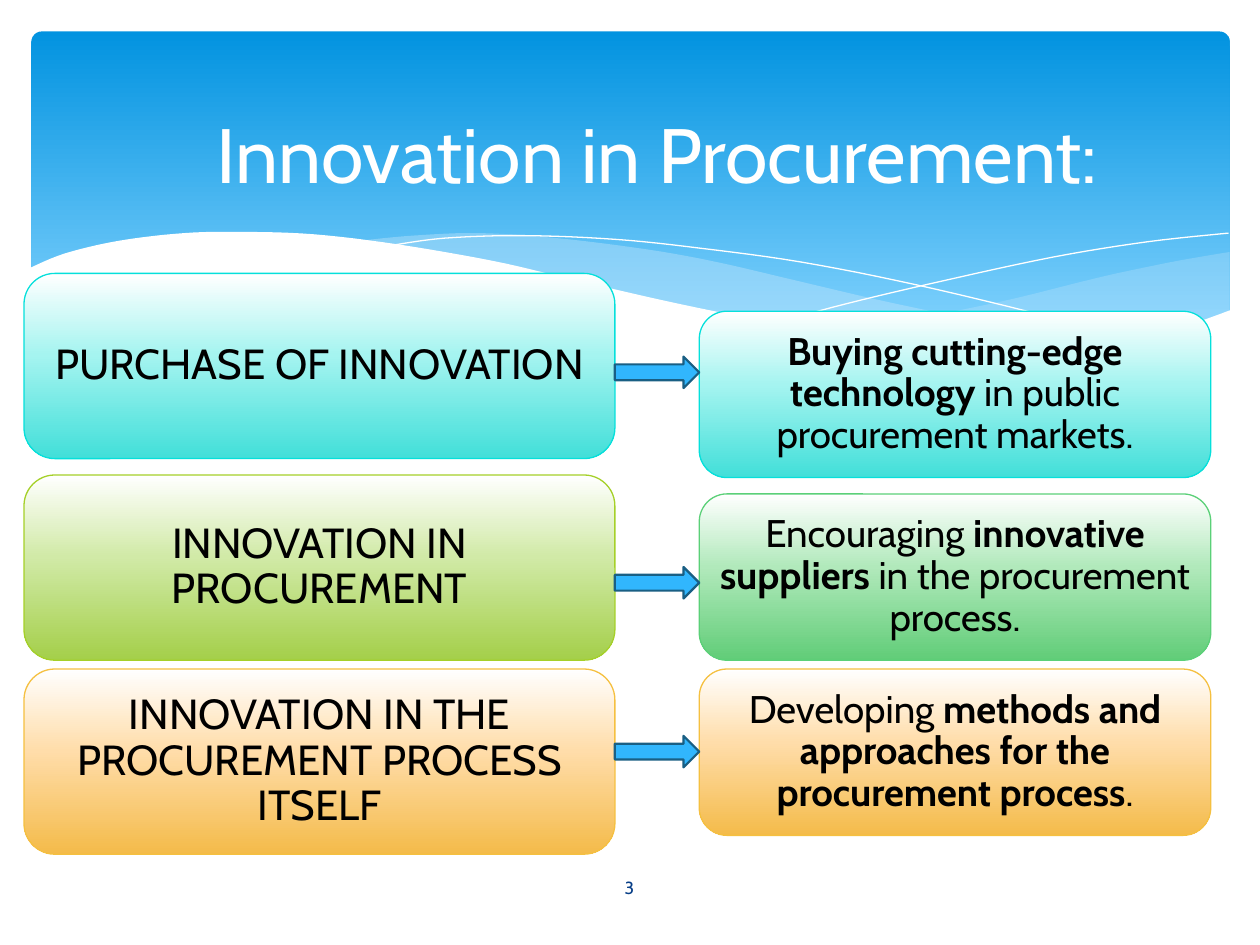
from dataclasses import dataclass

import pptx
import pptx.dml.color
import pptx.enum.shapes
import pptx.enum.text
import pptx.oxml
import pptx.oxml.ns
import pptx.util

# The grid has 100 columns and 75 rows of square cells
SLIDE_WIDTH, SLIDE_HEIGHT = pptx.util.Inches(10), pptx.util.Inches(7.5)
COLUMN, ROW = SLIDE_WIDTH / 100, SLIDE_HEIGHT / 75
SHAPES = pptx.enum.shapes.MSO_SHAPE


@dataclass(frozen=True)
class Theme:
    font: str = "Cabin"
    white: str = "FFFFFF"
    black: str = "000000"
    banner: tuple = ((0, "0293E0"), (90, "83D3FE"))
    wave: str = "C6E7FC"
    arrow: str = "31B6FD"
    arrow_line: str = "195F84"
    number: str = "073E87"
    title_size: int = 44
    topic_size: int = 24
    detail_size: int = 22
    number_size: int = 10


@dataclass(frozen=True)
class Area:
    """A rectangle in grid cells."""
    left: float
    top: float
    width: float
    height: float

    def emu(self) -> tuple:
        return (round(self.left * COLUMN), round(self.top * ROW),
                round(self.width * COLUMN), round(self.height * ROW))


@dataclass(frozen=True)
class Tint:
    middle: str
    bottom: str
    line: str

    def stops(self) -> tuple:
        return (0, THEME.white), (44, self.middle), (100, self.bottom)


@dataclass(frozen=True)
class Pair:
    """A topic, its arrow and its detail; ** marks bold text."""
    topic: str
    topic_top: float
    topic_tint: Tint
    arrow_top: float
    detail: str
    detail_top: float
    detail_tint: Tint


THEME = Theme()
TURQUOISE = Tint("A5F4F0", "42DFD9", "05E0DB")
LIME = Tint("D1EAA7", "A4CF4A", "A5D028")
GREEN = Tint("B1E9BB", "61CD78", "5BD078")
AMBER = Tint("FFDDAA", "F4BB4A", "F5C040")

PAIRS = (
    Pair("PURCHASE OF INNOVATION", 21.7, TURQUOISE, 28.3,
         "**Buying cutting-edge technology **in public procurement markets.", 24.7, TURQUOISE),
    Pair("INNOVATION IN PROCUREMENT", 37.7, LIME, 45,
         "Encouraging **innovative suppliers **in the procurement process.", 39.2, GREEN),
    Pair("INNOVATION IN THE PROCUREMENT PROCESS ITSELF", 53.1, AMBER, 58.4,
         "Developing **methods and approaches for the procurement process**.", 53.1, AMBER),
)

# Knots of the wave curves, in grid cells
RIGHT_WAVE_TOP = ((97.6, 20), (93.5, 20.7), (89.1, 21.6), (86.1, 22.3),
                  (80.5, 23.7), (75.3, 24.8), (70.6, 25.7), (66.1, 26.5))
RIGHT_WAVE_BOTTOM = ((66.1, 26.5), (70.5, 27.1), (75.7, 27.6), (80.3, 27.8), (84.4, 27.7),
                     (88.1, 27.3), (91.3, 26.7), (94.2, 25.9), (97.6, 24.7))
LEFT_WAVE_TOP = ((89.3, 27.3), (83.7, 26.5), (77.5, 25.4), (70.6, 24), (62.9, 22.2),
                 (56.9, 20.8), (51.4, 19.8), (44.2, 18.9), (38, 18.5), (32.8, 18.7), (28.6, 19.1))
LEFT_WAVE_BOTTOM = ((28.6, 19.1), (34.2, 19.9), (40.4, 21.1), (44.9, 22.2), (53, 24),
                    (60.1, 25.5), (66.5, 26.6), (72.2, 27.4), (77.3, 27.7), (81.8, 27.8),
                    (85.7, 27.7), (89.3, 27.3))
FALLING_LINE = ((30.9, 19.5), (35.3, 18.9), (41.6, 18.7), (48.9, 19), (55.6, 19.7),
                (63.6, 20.8), (72.7, 22.6), (83.1, 25.1), (90.7, 27.2))
RISING_LINE = ((61.3, 25.7), (67.2, 24.1), (74.8, 22.3), (83.6, 20.4), (91, 19.2), (97.5, 18.5))
SHEET_TOP = ((2.3, 21.3), (5.2, 20.1), (9.5, 19.1), (14.6, 18.5), (19.3, 18.4), (25, 18.6),
             (31.6, 19.4), (39.1, 20.7), (44.7, 22), (52.9, 23.9), (60.3, 25.4), (66.8, 26.5),
             (72.6, 27.2), (79.3, 27.6), (85, 27.5), (89.9, 26.9), (94, 25.9), (97.7, 24.6))
SHEET_CORNERS = ((97.7, 32.9), (2.3, 32.9))


def color(value: str) -> pptx.dml.color.RGBColor:
    return pptx.dml.color.RGBColor.from_string(value)


def smooth_curve(knots: tuple, steps: int = 6) -> list:
    """Catmull-Rom points through the knots."""
    padded = (knots[0], *knots, knots[-1])
    points = [knots[0]]
    for a, b, c, d in zip(padded, padded[1:], padded[2:], padded[3:]):
        for step in range(1, steps + 1):
            t = step / steps
            points.append(tuple(
                q + t / 2 * (r - p + t * (2 * p - 5 * q + 4 * r - s + t * (3 * (q - r) + s - p)))
                for p, q, r, s in zip(a, b, c, d)))
    return points


def paint(shape, *, fill=None, line=None, line_width=0.75, opacity=100) -> None:
    """Fill with one colour or with (position, colour) stops from top to bottom."""
    shape.shadow.inherit = False
    if fill is None:
        shape.fill.background()
    elif isinstance(fill, str):
        shape.fill.solid()
        shape.fill.fore_color.rgb = color(fill)
        if opacity < 100:
            solid = shape._element.spPr.find(pptx.oxml.ns.qn("a:solidFill"))
            solid[0].append(pptx.oxml.parse_xml(
                f'<a:alpha {pptx.oxml.ns.nsdecls("a")} val="{opacity * 1000}"/>'))
    else:
        shape.fill.gradient()
        shape.fill.gradient_angle = 270
        stop_list = next(shape._element.spPr.iter(pptx.oxml.ns.qn("a:gsLst")))
        stop_list[:] = [pptx.oxml.parse_xml(
            f'<a:gs {pptx.oxml.ns.nsdecls("a")} pos="{position * 1000}">'
            f'<a:srgbClr val="{value}"/></a:gs>') for position, value in fill]
    if line is None:
        shape.line.fill.background()
    else:
        shape.line.color.rgb = color(line)
        shape.line.width = pptx.util.Pt(line_width)


def write_text(shape, text: str, *, size, text_color, inset=0.1, line_spacing=None) -> None:
    frame = shape.text_frame
    frame.word_wrap = True
    frame.auto_size = pptx.enum.text.MSO_AUTO_SIZE.NONE
    frame.vertical_anchor = pptx.enum.text.MSO_ANCHOR.MIDDLE
    frame.margin_left = frame.margin_right = pptx.util.Inches(inset)
    frame.margin_top = frame.margin_bottom = pptx.util.Inches(inset)
    paragraph = frame.paragraphs[0]
    paragraph.alignment = pptx.enum.text.PP_ALIGN.CENTER
    paragraph.line_spacing = line_spacing
    for index, part in enumerate(text.split("**")):
        if part:
            run = paragraph.add_run()
            run.text = part
            run.font.name, run.font.size = THEME.font, pptx.util.Pt(size)
            run.font.bold = index % 2 == 1
            run.font.color.rgb = color(text_color)


def add_box(slide, kind, area: Area, **look):
    shape = slide.shapes.add_shape(kind, *area.emu())
    paint(shape, **look)
    return shape


def add_outline(slide, points, *, close=True, **look) -> None:
    start, *rest = [(x * COLUMN, y * ROW) for x, y in points]
    builder = slide.shapes.build_freeform(*start)
    builder.add_line_segments(rest, close=close)
    paint(builder.convert_to_shape(), **look)


def add_backdrop(slide) -> None:
    banner = add_box(slide, SHAPES.ROUNDED_RECTANGLE, Area(2.5, 2.5, 95.1, 27), fill=THEME.banner)
    banner.adjustments[0] = 0.03
    for top, bottom, opacity in ((RIGHT_WAVE_TOP, RIGHT_WAVE_BOTTOM, 29),
                                 (LEFT_WAVE_TOP, LEFT_WAVE_BOTTOM, 40)):
        add_outline(slide, smooth_curve(top) + smooth_curve(bottom),
                    fill=THEME.wave, opacity=opacity)
    for knots in (FALLING_LINE, RISING_LINE):
        add_outline(slide, smooth_curve(knots), close=False, line=THEME.white, line_width=0)
    add_outline(slide, [*smooth_curve(SHEET_TOP), *SHEET_CORNERS], fill=THEME.white)


def add_pair(slide, pair: Pair) -> None:
    detail = add_box(slide, SHAPES.ROUNDED_RECTANGLE, Area(55.5, pair.detail_top, 40.6, 13.2),
                     fill=pair.detail_tint.stops(), line=pair.detail_tint.line)
    write_text(detail, pair.detail, size=THEME.detail_size, text_color=THEME.black,
               inset=0.09, line_spacing=0.9)
    topic = add_box(slide, SHAPES.ROUNDED_RECTANGLE, Area(1.9, pair.topic_top, 46.9, 14.7),
                    fill=pair.topic_tint.stops(), line=pair.topic_tint.line)
    write_text(topic, pair.topic, size=THEME.topic_size, text_color=THEME.black,
               line_spacing=0.9)
    add_box(slide, SHAPES.RIGHT_ARROW, Area(48.8, pair.arrow_top, 6.7, 2.5),
            fill=THEME.arrow, line=THEME.arrow_line, line_width=1.25)


def main() -> None:
    presentation = pptx.Presentation()
    presentation.slide_width, presentation.slide_height = SLIDE_WIDTH, SLIDE_HEIGHT
    slide = presentation.slides.add_slide(presentation.slide_layouts[5])
    add_backdrop(slide)

    # Title, brought in front of the backdrop
    title = slide.shapes.title
    slide.shapes._spTree.append(title._element)
    title.left, title.top, title.width, title.height = Area(5.5, -1, 93.3, 26.2).emu()
    write_text(title, "Innovation in Procurement:", size=THEME.title_size, text_color=THEME.white)

    for pair in PAIRS:
        add_pair(slide, pair)

    # Slide number
    number = slide.shapes.add_textbox(*Area(43.6, 68.4, 12.7, 4).emu())
    write_text(number, "3", size=THEME.number_size, text_color=THEME.number)
    presentation.save("out.pptx")


if __name__ == "__main__":
    main()
